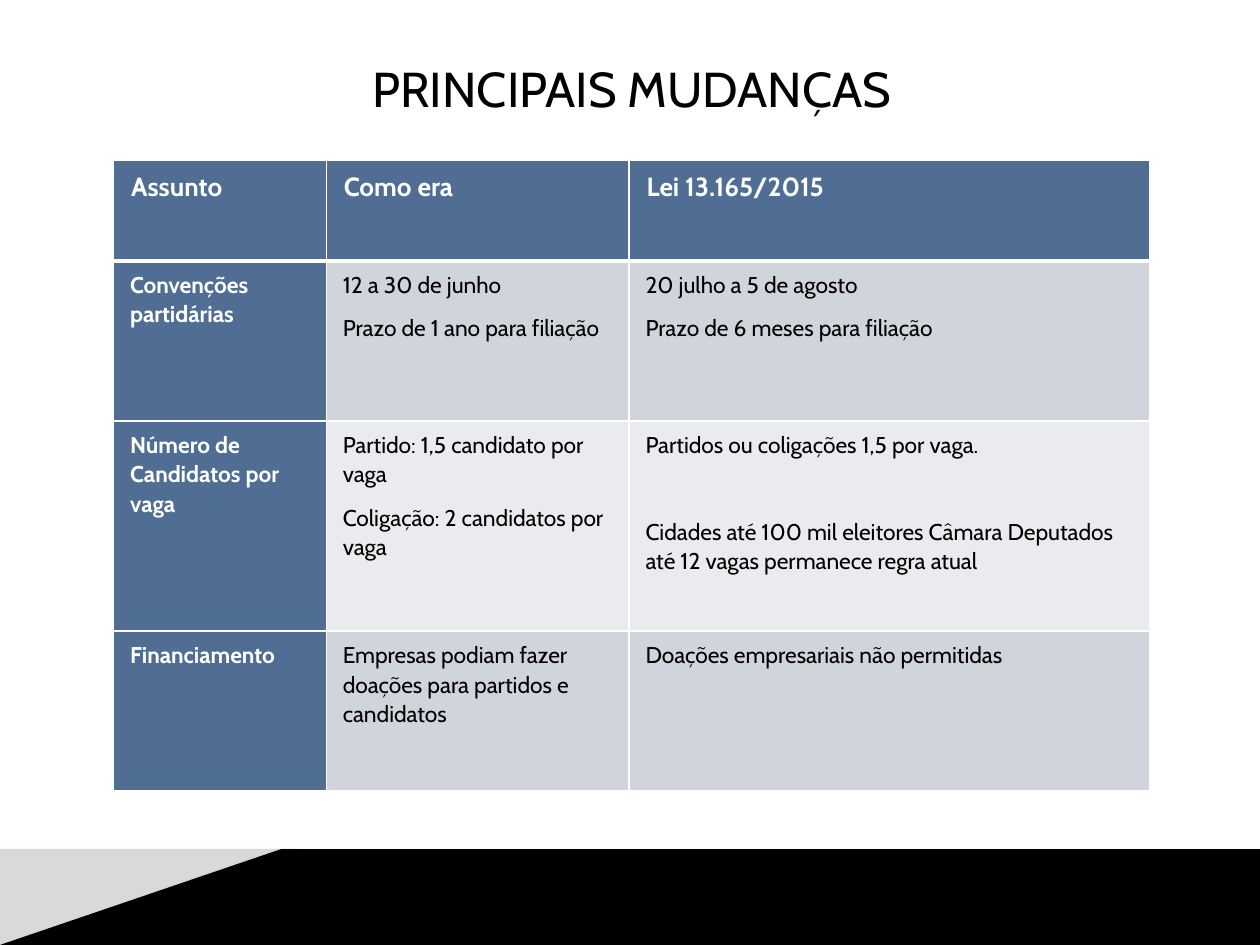
from lxml import etree
from pptx import Presentation
from pptx.dml.color import RGBColor
from pptx.enum import text
from pptx.oxml import ns
from pptx.util import Pt

FONT = "Cabin"
BLACK = RGBColor(0x00, 0x00, 0x00)
WHITE = RGBColor(0xFF, 0xFF, 0xFF)
GREY = RGBColor(0xD9, 0xD9, 0xD9)
BLUE = RGBColor(0x50, 0x6E, 0x94)
BAND_DARK = RGBColor(0xD0, 0xD5, 0xDC)
BAND_LIGHT = RGBColor(0xE9, 0xEB, 0xEE)


def set_font(font, **values):
    for name, value in values.items():
        if name == "color":
            font.color.rgb = value
        else:
            setattr(font, name, value)


def add_border(cell, position, side, width):
    properties = cell._tc.get_or_add_tcPr()
    line = etree.Element(ns.qn(f"a:{side}"), w=str(Pt(width)))
    fill = etree.SubElement(line, ns.qn("a:solidFill"))
    etree.SubElement(fill, ns.qn("a:srgbClr"), val=str(WHITE))
    properties.insert(position, line)


deck = Presentation()
deck.slide_width, deck.slide_height = Pt(720), Pt(540)
page = deck.slides.add_slide(deck.slide_layouts[5])

# Footer bands
bands = [
    (GREY, [(0, 540), (0, 485.3), (170, 485.3), (297.5, 540)]),
    (BLACK, [(0, 540), (160.5, 485.3), (720, 485.3), (720, 540)]),
]
for color, points in bands:
    corners = [(Pt(x), Pt(y)) for x, y in points]
    builder = page.shapes.build_freeform(*corners[0])
    builder.add_line_segments(corners[1:], close=True)
    band = builder.convert_to_shape()
    band.fill.solid()
    band.fill.fore_color.rgb = color
    band.line.fill.background()
    band.shadow.inherit = False
    effects = band._element.spPr.find(ns.qn("a:effectLst"))
    shadow = etree.SubElement(effects, ns.qn("a:outerShdw"), blurRad=str(Pt(3.1)),
                              dist=str(Pt(1.6)), dir="5400000", rotWithShape="0")
    shade = etree.SubElement(shadow, ns.qn("a:srgbClr"), val=str(BLACK))
    etree.SubElement(shade, ns.qn("a:alpha"), val="38000")

# Title
title = page.shapes.title
title.left, title.top, title.width, title.height = Pt(65), Pt(29), Pt(592), Pt(43)
title.text_frame.text = "PRINCIPAIS MUDANÇAS"
title.text_frame.vertical_anchor = text.MSO_ANCHOR.MIDDLE
heading = title.text_frame.paragraphs[0]
heading.alignment = text.PP_ALIGN.CENTER
set_font(heading.runs[0].font, name=FONT, size=Pt(28), color=BLACK)

# Table of changes: one list of paragraphs per cell
rows = [
    [["Assunto"], ["Como era"], ["Lei 13.165/2015"]],
    [["Convenções partidárias"],
     ["12 a 30 de junho", "Prazo de 1 ano para filiação"],
     ["20 julho a 5 de agosto", "Prazo de 6 meses para filiação"]],
    [["Número de Candidatos por vaga"],
     ["Partido: 1,5 candidato por vaga", "Coligação: 2 candidatos por vaga"],
     ["Partidos ou coligações 1,5 por vaga.",
      "Cidades até 100 mil eleitores Câmara Deputados até 12 vagas permanece regra atual"]],
    [["Financiamento"],
     ["Empresas podiam fazer doações para partidos e candidatos"],
     ["Doações empresariais não permitidas"]],
]
column_widths = [121.5, 173, 297.5]
row_heights = [57.6, 91.4, 120.2, 91.4]
table = page.shapes.add_table(len(rows), len(column_widths), Pt(65), Pt(91.5),
                              Pt(sum(column_widths)), Pt(sum(row_heights))).table
table.horz_banding = False
for column, width in zip(table.columns, column_widths):
    column.width = Pt(width)
for row, height in zip(table.rows, row_heights):
    row.height = Pt(height)

for r, row in enumerate(rows):
    for c, lines in enumerate(row):
        cell = table.cell(r, c)
        is_header = r == 0 or c == 0
        side_margin = Pt(10 if r == 0 else 9.4)
        layout = {"margin_left": side_margin, "margin_right": side_margin,
                  "margin_top": Pt(5), "margin_bottom": Pt(5)}
        for name, value in layout.items():
            setattr(cell, name, value)
        cell.fill.solid()
        cell.fill.fore_color.rgb = BLUE if is_header else BAND_DARK if r % 2 else BAND_LIGHT
        widths = {"lnL": 1, "lnR": 1, "lnT": 3 if r == 1 else 1, "lnB": 3 if r == 0 else 1}
        for position, (side, width) in enumerate(widths.items()):
            add_border(cell, position, side, width)
        cell.text_frame.text = "\n".join(lines)
        for para in cell.text_frame.paragraphs:
            para.line_spacing = 1.07
            para.space_after = Pt(8)
            set_font(para.runs[0].font, name=FONT, size=Pt(15 if r == 0 else 13),
                     bold=is_header, color=WHITE if is_header else BLACK)

# Wider gap between the two rules on candidates
table.cell(2, 2).text_frame.paragraphs[0].space_after = Pt(33)

deck.save("out.pptx")
